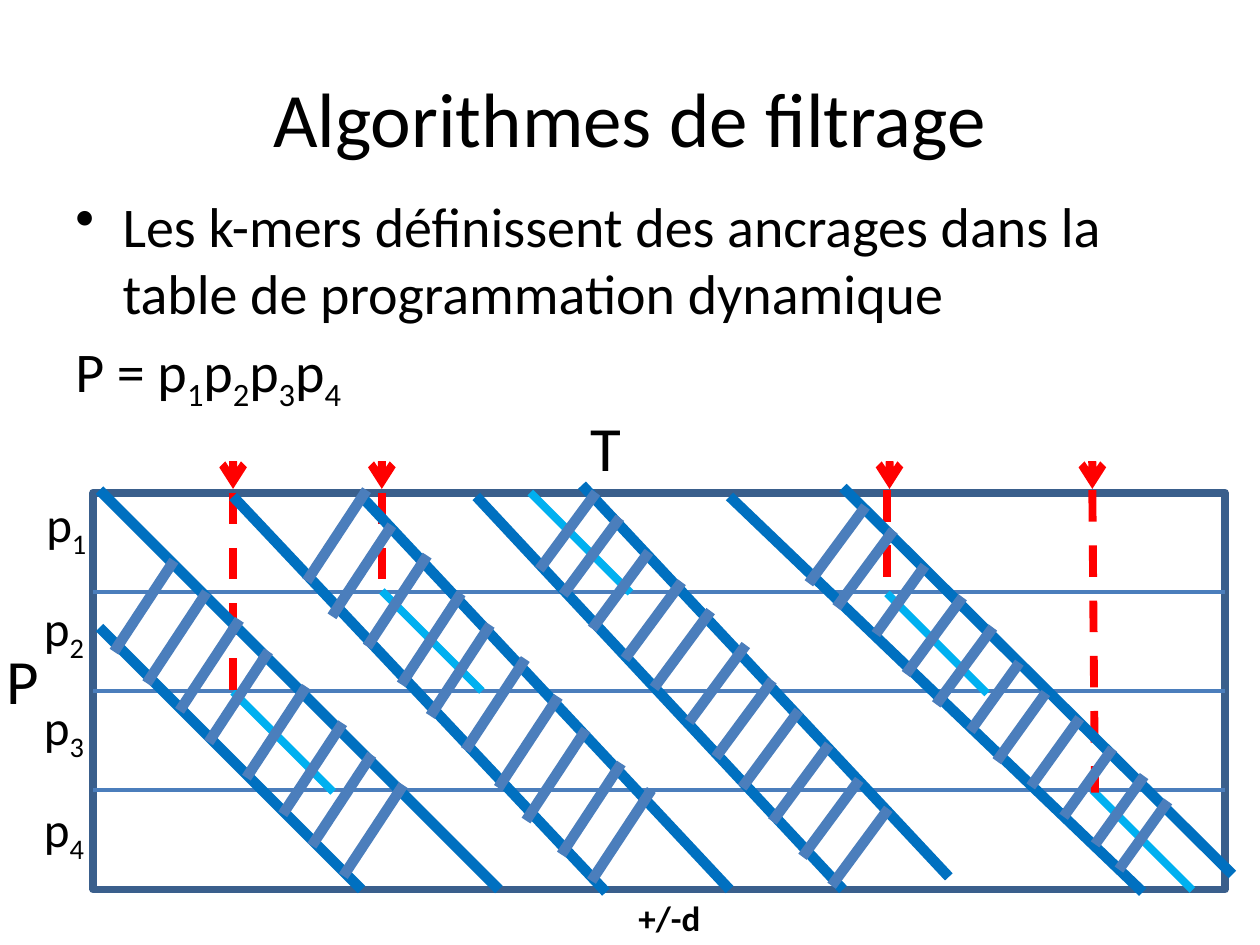
from dataclasses import dataclass

from lxml import etree
from pptx import Presentation
from pptx import util as u
from pptx.dml.color import RGBColor
from pptx.enum import dml, shapes, text
from pptx.oxml.ns import qn

BLACK, RED, CYAN = "000000", "FF0000", "00B0F0"
EDGE_BLUE, RUNG_BLUE, FRAME_BLUE = "0070C0", "4B7EBC", "3A5F8C"
LEFT, TOP, WIDTH, HEIGHT = 53.3, 281.5, 646.6, 226.8
ROWS = 4
ANCHOR_LENGTH = 57.2

Point = tuple[float, float]


@dataclass
class Label:
    """A text box; parts between bars are normal and subscript in turn."""
    content: str
    left: float
    top: float
    width: float
    height: float
    size: float
    bold: bool = False


@dataclass
class Band:
    """Two slanted edges joined by rungs that all share one offset."""
    lower: tuple[Point, Point]
    upper: tuple[Point, Point]
    offset: Point
    rungs: list[Point]
    short_offset: Point = (0, 0)
    short_rungs: tuple[Point, ...] = ()


@dataclass
class Anchor:
    """A k-mer match: arrow above the table, dashes down to a cyan diagonal."""
    start: Point
    dash_top: float
    dash_end: Point
    arrow_x: float


LABELS = [
    Label("p|1", 19.4, 278.6, 38.9, 41, 28),
    Label("p|2", 18, 337.7, 38.9, 41, 28),
    Label("p|3", 18, 394.6, 38.9, 41, 28),
    Label("p|4", 18, 452.9, 38.9, 41, 28),
    Label("T", 330.5, 229.7, 32.4, 51.1, 36),
    Label("P", -3.6, 362.9, 33.1, 51.1, 36),
    Label("+/-d", 357.8, 509, 50.4, 31.7, 20, bold=True),
]

ANCHORS = [
    Anchor((133.2, 395.3), 281.5, (133.2, 394.6), 133.2),
    Anchor((218.2, 337.7), 281.5, (218.2, 339.1), 218.2),
    Anchor((506.9, 339.1), 280.1, (506.9, 337.7), 508.3),
    Anchor((624.2, 451.4), 280.1, (625.7, 452.9), 624.2),
]
UNMARKED_DIAGONAL = (303.1, 281.5)

BANDS = [
    Band(((56.9, 358.6), (206.6, 508.3)), ((56.9, 280.1), (285.1, 508.3)), (-34.2, 52),
         [(99.4, 320.4), (118.1, 338.4), (136.8, 354.2), (153.4, 372.2),
          (175, 392.4), (195.8, 413.3), (212.4, 431.3), (230.4, 448.6)]),
    Band(((133.2, 283.7), (346.3, 509.8)), ((206.6, 283.7), (416.9, 508.3)), (-34.2, 52),
         [(209.5, 280.1), (223.9, 300.2), (244.1, 317.5), (263.5, 339.1), (280.1, 357.1),
          (300.2, 376.6), (319, 398.2), (334.8, 416.9), (355, 436.3), (372.2, 451.4)]),
    Band(((272.2, 283.7), (481.7, 508.3)), ((332.6, 277.2), (542.2, 501.1)), (-32.4, 43.9),
         [(340.6, 281.5), (354.2, 295.9), (370.8, 315.4), (389.5, 332.6), (406.1, 349.2),
          (426.2, 368.6), (441.4, 388.8), (456.5, 406.1), (473.8, 425.5), (491, 445.7),
          (507.6, 462.2)]),
    Band(((416.9, 283.7), (653, 509.8)), ((481.7, 278.6), (704.2, 499.7)), (-32.4, 43.9),
         [(494.6, 289.4), (510.5, 303.1), (550.1, 341.3), (567.4, 358.6)],
         (-28, 39),
         ((528.5, 323.3), (582.5, 378.7), (597.6, 396), (617, 410.4), (635.8, 427.7),
          (653.8, 443.5), (667.4, 457.9))),
]


def color(value: str) -> RGBColor:
    return RGBColor.from_string(value)


def add_line(slide, start: Point, end: Point, line_color: str, width: float,
             dashed: bool = False, arrow: bool = False):
    connector = slide.shapes.add_connector(
        shapes.MSO_CONNECTOR.STRAIGHT, *(u.Pt(value) for value in (*start, *end)))
    connector.line.color.rgb = color(line_color)
    connector.line.width = u.Pt(width)
    if dashed:
        connector.line.dash_style = dml.MSO_LINE.DASH
    if arrow:
        etree.SubElement(connector.line._get_or_add_ln(), qn("a:tailEnd"), type="arrow")
    etree.SubElement(connector._element.spPr, qn("a:effectLst"))
    return connector


def add_box(slide, left: float, top: float, width: float, height: float, wrap: bool):
    box = slide.shapes.add_textbox(*(u.Pt(value) for value in (left, top, width, height)))
    box.text_frame.word_wrap = wrap
    return box.text_frame


def fill_paragraph(paragraph, content: str, size: float, bold: bool = False) -> None:
    """Write content, lowering every second part between bars."""
    font = paragraph.font
    font.name, font.size, font.bold = "Calibri", u.Pt(size), bold
    font.color.rgb = color(BLACK)
    for index, part in enumerate(content.split("|")):
        run = paragraph.add_run()
        run.text = part
        if index % 2:
            run._r.get_or_add_rPr().set("baseline", "-25000")


def add_bullet(paragraph, indent: float) -> None:
    properties = paragraph._p.get_or_add_pPr()
    properties.set("marL", str(u.Pt(indent)))
    properties.set("indent", str(-u.Pt(indent)))
    bullet = etree.Element(qn("a:buChar"), char="•")
    properties.find(qn("a:defRPr")).addprevious(bullet)


def add_heading(slide) -> None:
    title = add_box(slide, 36, 21.6, 648, 90, True)
    title.vertical_anchor = text.MSO_ANCHOR.MIDDLE
    title.paragraphs[0].alignment = text.PP_ALIGN.CENTER
    fill_paragraph(title.paragraphs[0], "Algorithmes de filtrage", 44)

    body = add_box(slide, 36, 105.8, 648, 144, True)
    statement, pattern = body.paragraphs[0], body.add_paragraph()
    fill_paragraph(statement, "Les k-mers définissent des ancrages dans la "
                   "table de programmation dynamique", 32)
    fill_paragraph(pattern, "P = p|1|p|2|p|3|p|4", 32)
    for paragraph in (statement, pattern):
        paragraph.space_before = u.Pt(6.4)
    add_bullet(statement, 27)


def add_table_frame(slide) -> None:
    frame = slide.shapes.add_shape(
        shapes.MSO_SHAPE.RECTANGLE, *(u.Pt(value) for value in (LEFT, TOP, WIDTH, HEIGHT)))
    frame.shadow.inherit = False
    frame.fill.background()
    frame.line.color.rgb = color(FRAME_BLUE)
    frame.line.width = u.Pt(4.5)
    for row in range(1, ROWS):
        y = TOP + HEIGHT * row / ROWS
        divider = add_line(slide, (LEFT, y), (LEFT + WIDTH, y), RUNG_BLUE, 2.25)
        if row * 2 == ROWS:
            divider.begin_connect(frame, 1)
            divider.end_connect(frame, 3)


def add_label(slide, label: Label) -> None:
    frame = add_box(slide, label.left, label.top, label.width, label.height, False)
    frame.auto_size = text.MSO_AUTO_SIZE.SHAPE_TO_FIT_TEXT
    fill_paragraph(frame.paragraphs[0], label.content, label.size, label.bold)


def add_diagonal(slide, start: Point) -> None:
    end = (start[0] + ANCHOR_LENGTH, start[1] + ANCHOR_LENGTH)
    add_line(slide, start, end, CYAN, 4.5)


def add_anchor(slide, anchor: Anchor) -> None:
    add_diagonal(slide, anchor.start)
    add_line(slide, (anchor.start[0], anchor.dash_top), anchor.dash_end, RED, 4.5, dashed=True)
    add_line(slide, (anchor.arrow_x, 263.5), (anchor.arrow_x, 279.4), RED, 4.5, arrow=True)


def add_band(slide, band: Band) -> None:
    for edge in (band.lower, band.upper):
        add_line(slide, *edge, EDGE_BLUE, 6)
    for (dx, dy), rungs in ((band.offset, band.rungs), (band.short_offset, band.short_rungs)):
        for x, y in rungs:
            add_line(slide, (x, y), (x + dx, y + dy), RUNG_BLUE, 6)


def main() -> None:
    presentation = Presentation()
    presentation.slide_width, presentation.slide_height = u.Pt(720), u.Pt(540)
    slide = presentation.slides.add_slide(presentation.slide_layouts[6])
    add_heading(slide)
    add_table_frame(slide)
    for label in LABELS:
        add_label(slide, label)
    add_diagonal(slide, UNMARKED_DIAGONAL)
    for anchor in ANCHORS:
        add_anchor(slide, anchor)
    for band in BANDS:
        add_band(slide, band)
    presentation.save("out.pptx")


if __name__ == "__main__":
    main()
